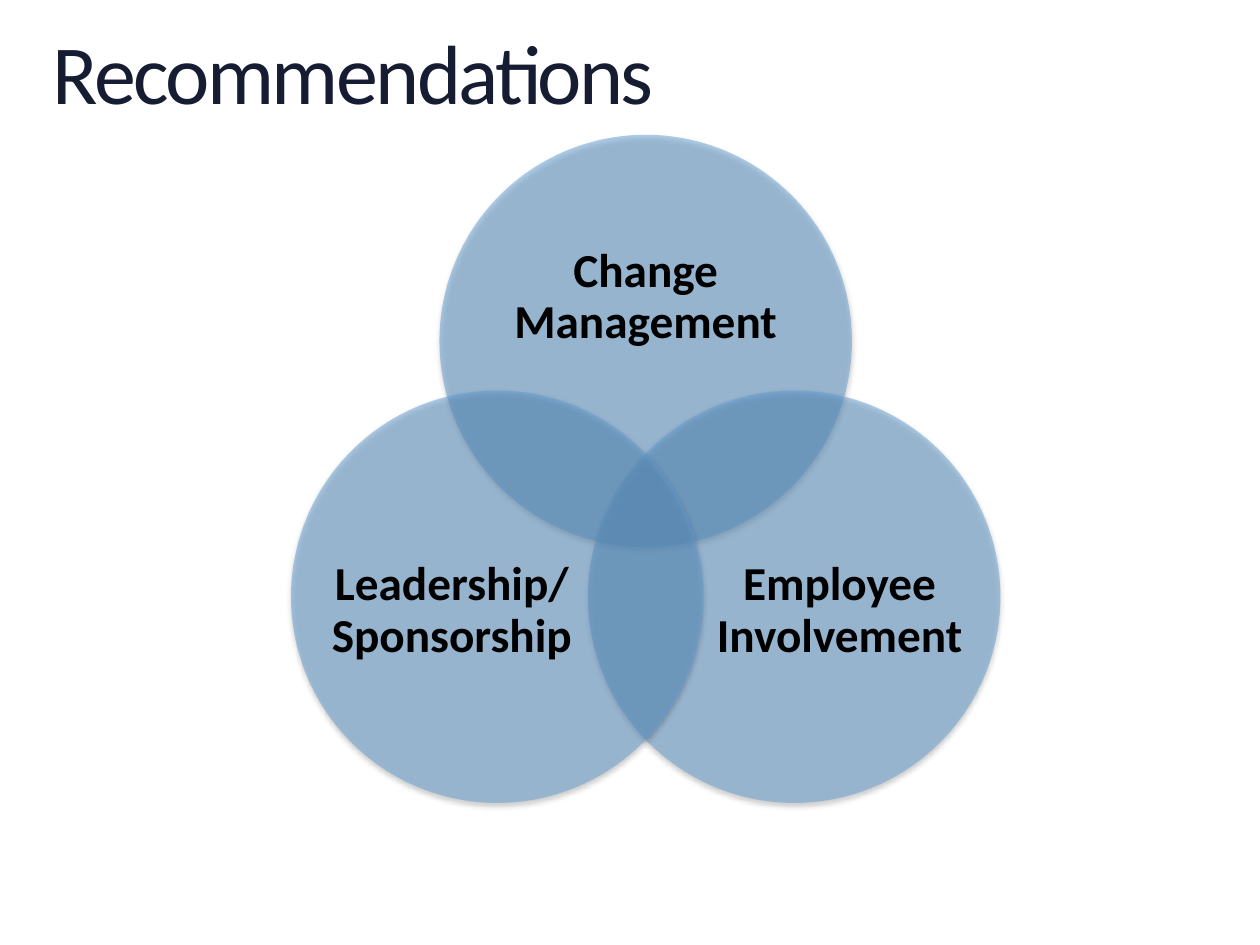
import dataclasses

import pptx
import pptx.dml.color
import pptx.enum.shapes
import pptx.enum.text
import pptx.oxml
import pptx.oxml.ns
import pptx.util


@dataclasses.dataclass(frozen=True)
class Theme:
    font: str = "Calibri"
    title_color: str = "161D32"
    label_color: str = "000000"
    circle_color: str = "629DD1"
    circle_opacity: int = 50
    shadow_color: str = "000000"
    shadow_opacity: int = 38
    title_size: float = 48
    title_spacing: float = -1.5
    label_size: float = 27
    line_spacing: float = 0.9


@dataclasses.dataclass(frozen=True)
class Box:
    left: float
    top: float
    width: float
    height: float

    def inner_box(self, left, top, width, height):
        """Return the box covering the given shares of this one."""
        return Box(self.left + left * self.width, self.top + top * self.height,
                   width * self.width, height * self.height)

    def lengths(self):
        return [pptx.util.Inches(value) for value in dataclasses.astuple(self)]


THEME = Theme()
SLIDE_BOX = Box(0, 0, 10, 7.5)
TITLE_BOX = Box(0.42, 0.25, 9.17, 0.73)
VENN_BOX = Box(2.31, 1.07, 5.63, 5.31)

# Circle position in diameters, then the label's box as shares of its circle
CIRCLES = [
    ("Change Management", (0.36, 0), (0.13, 0.17, 0.74, 0.45)),
    ("Employee Involvement", (0.72, 0.62), (0.31, 0.26, 0.6, 0.55)),
    ("Leadership/ Sponsorship", (0, 0.62), (0.09, 0.26, 0.6, 0.55)),
]


def add_text(shapes, box, text, size, color):
    """Add a text box without margins and return its shape."""
    shape = shapes.add_textbox(*box.lengths())
    text_frame = shape.text_frame
    text_frame.word_wrap = True
    text_frame.margin_left = text_frame.margin_right = 0
    text_frame.margin_top = text_frame.margin_bottom = 0
    text_frame.text = text
    paragraph = text_frame.paragraphs[0]
    paragraph.line_spacing = THEME.line_spacing
    font = paragraph.runs[0].font
    font.name = THEME.font
    font.size = pptx.util.Pt(size)
    font.color.rgb = pptx.dml.color.RGBColor.from_string(color)
    return shape


def add_title(slide, box):
    shape = add_text(slide.shapes, box, "Recommendations",
                     THEME.title_size, THEME.title_color)
    # Tighter letter spacing, in hundredths of a point
    run = shape.text_frame.paragraphs[0].runs[0]
    run._r.get_or_add_rPr().set("spc", str(int(THEME.title_spacing * 100)))


def add_circle(shapes, box):
    circle = shapes.add_shape(pptx.enum.shapes.MSO_SHAPE.OVAL, *box.lengths())
    circle.line.fill.background()
    circle.fill.solid()
    circle.fill.fore_color.rgb = pptx.dml.color.RGBColor.from_string(THEME.circle_color)
    # Translucent fill
    properties = circle._element.spPr
    color = properties.find(".//" + pptx.oxml.ns.qn("a:srgbClr"))
    color.append(pptx.oxml.parse_xml(
        f'<a:alpha {pptx.oxml.ns.nsdecls("a")} val="{THEME.circle_opacity * 1000}"/>'))
    # Soft shadow straight below
    circle.shadow.inherit = False
    effects = properties.find(pptx.oxml.ns.qn("a:effectLst"))
    effects.append(pptx.oxml.parse_xml(
        f'<a:outerShdw {pptx.oxml.ns.nsdecls("a")} blurRad="{pptx.util.Pt(3.1)}" '
        f'dist="{pptx.util.Pt(1.6)}" dir="5400000" rotWithShape="0">'
        f'<a:srgbClr val="{THEME.shadow_color}">'
        f'<a:alpha val="{THEME.shadow_opacity * 1000}"/></a:srgbClr></a:outerShdw>'))


def add_label(shapes, box, text):
    label = add_text(shapes, box, text, THEME.label_size, THEME.label_color)
    label.text_frame.vertical_anchor = pptx.enum.text.MSO_ANCHOR.MIDDLE
    paragraph = label.text_frame.paragraphs[0]
    paragraph.alignment = pptx.enum.text.PP_ALIGN.CENTER
    paragraph.runs[0].font.bold = True


def add_venn(slide, box):
    """Three overlapping circles; the box is 1.72 diameters wide."""
    shapes = slide.shapes.add_group_shape().shapes
    diameter = box.width / 1.72
    for text, (column, row), label_shares in CIRCLES:
        circle_box = Box(box.left + column * diameter, box.top + row * diameter,
                         diameter, diameter)
        add_circle(shapes, circle_box)
        add_label(shapes, circle_box.inner_box(*label_shares), text)


def main():
    presentation = pptx.Presentation()
    presentation.slide_width = pptx.util.Inches(SLIDE_BOX.width)
    presentation.slide_height = pptx.util.Inches(SLIDE_BOX.height)
    slide = presentation.slides.add_slide(presentation.slide_layouts[6])
    add_title(slide, TITLE_BOX)
    add_venn(slide, VENN_BOX)
    presentation.save("out.pptx")


if __name__ == "__main__":
    main()
